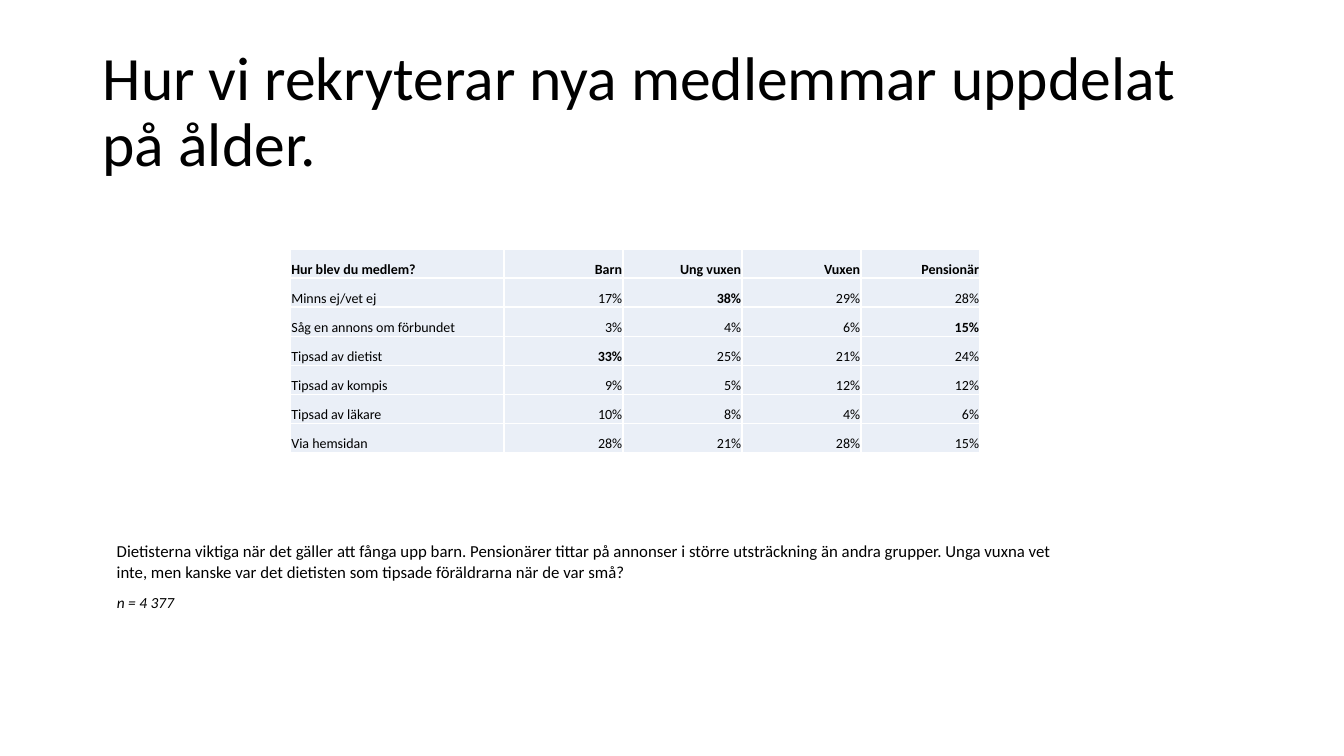
from lxml.etree import SubElement
from pptx import Presentation
from pptx.dml.color import RGBColor
from pptx.enum.text import MSO_ANCHOR as Anchor, PP_ALIGN as Align
from pptx.oxml.ns import qn
from pptx.util import Inches, Pt

COLORS = {"text": "000000", "cell": "EAEFF7", "border": "FFFFFF"}
HEADERS = ["Hur blev du medlem?", "Barn", "Ung vuxen", "Vuxen", "Pensionär"]
ANSWERS = [
    ("Minns ej/vet ej", 17, 38, 29, 28),
    ("Såg en annons om förbundet", 3, 4, 6, 15),
    ("Tipsad av dietist", 33, 25, 21, 24),
    ("Tipsad av kompis", 9, 5, 12, 12),
    ("Tipsad av läkare", 10, 8, 4, 6),
    ("Via hemsidan", 28, 21, 28, 15),
]
HIGHLIGHTS = {(1, 2), (2, 4), (3, 1)}


class SlideBuilder:
    font = "Calibri"

    def __init__(self, deck):
        self.slide = deck.slides.add_slide(deck.slide_layouts[6])

    def style(self, para, size, bold=False, italic=False):
        for span in para.runs:
            span.font.name = self.font
            span.font.size = Pt(size)
            span.font.bold = bold
            span.font.italic = italic
            span.font.color.rgb = RGBColor.from_string(COLORS["text"])

    def text(self, words, left, top, width, height, size,
             anchor=Anchor.TOP, spacing=1.0, italic=False):
        box = self.slide.shapes.add_textbox(
            Inches(left), Inches(top), Inches(width), Inches(height))
        frame = box.text_frame
        frame.word_wrap = True
        frame.vertical_anchor = anchor
        frame.text = words
        para = frame.paragraphs[0]
        para.line_spacing = spacing
        self.style(para, size, italic=italic)

    def borders(self, cell):
        properties = cell._tc.get_or_add_tcPr()
        for side in ("L", "R", "T", "B"):
            line = SubElement(properties, qn(f"a:ln{side}"), w=str(Pt(1)))
            fill = SubElement(line, qn("a:solidFill"))
            SubElement(fill, qn("a:srgbClr"), val=COLORS["border"])

    def cell(self, cell, words, bold, align):
        self.borders(cell)
        cell.fill.solid()
        cell.fill.fore_color.rgb = RGBColor.from_string(COLORS["cell"])
        cell.margin_left = cell.margin_right = cell.margin_top = Inches(0.01)
        cell.margin_bottom = 0
        cell.vertical_anchor = Anchor.BOTTOM
        cell.text_frame.text = words
        para = cell.text_frame.paragraphs[0]
        para.alignment = align
        self.style(para, 10, bold)

    def table(self, rows, highlights, left, top, widths, height):
        table = self.slide.shapes.add_table(
            len(rows), len(widths), Inches(left), Inches(top),
            Inches(sum(widths)), Inches(height)).table
        for column, width in zip(table.columns, widths):
            column.width = Inches(width)
        for r, row in enumerate(rows):
            for c, words in enumerate(row):
                bold = r == 0 or (r, c) in highlights
                align = Align.RIGHT if c else Align.LEFT
                self.cell(table.cell(r, c), words, bold, align)


def main():
    deck = Presentation()
    deck.slide_width, deck.slide_height = Inches(13.33), Inches(7.5)
    page = SlideBuilder(deck)
    page.text("Hur vi rekryterar nya medlemmar uppdelat på ålder.",
              0.92, 0.4, 11.5, 1.45, 44, anchor=Anchor.MIDDLE, spacing=0.9)
    page.text("n = 4 377", 1.06, 5.83, 2.41, 0.22, 11, italic=True)
    page.text("Dietisterna viktiga när det gäller att fånga upp barn. "
              "Pensionärer tittar på annonser i större utsträckning än andra "
              "grupper. Unga vuxna vet inte, men kanske var det dietisten som "
              "tipsade föräldrarna när de var små?",
              1.06, 5.32, 9.5, 0.5, 12)
    rows = [HEADERS] + [
        [answer] + [f"{share}%" for share in shares]
        for answer, *shares in ANSWERS]
    page.table(rows, HIGHLIGHTS, 2.88, 2.47, [2.12] + [1.18] * 4, 2.02)
    deck.save("out.pptx")


if __name__ == "__main__":
    main()
